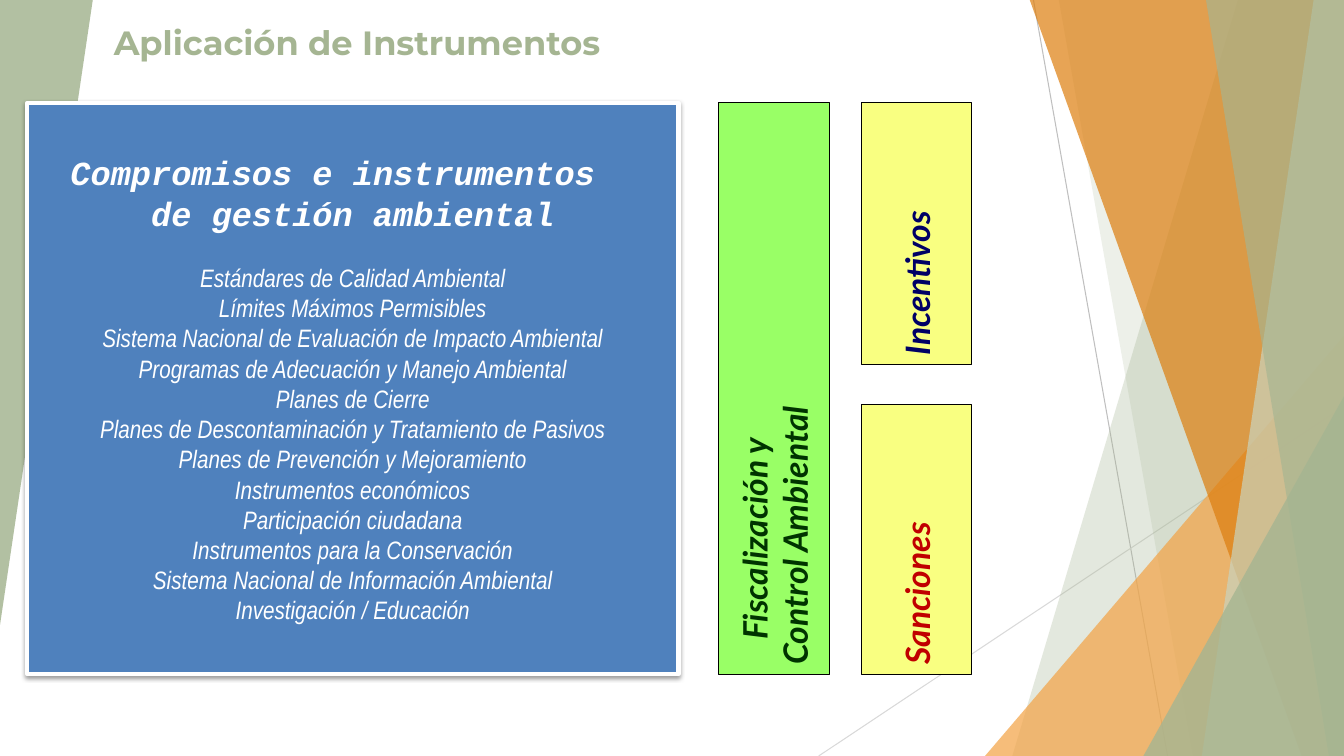
from lxml import etree
from pptx import Presentation
from pptx.dml.color import RGBColor
from pptx.enum import shapes, text
from pptx.oxml.ns import qn
from pptx.util import Inches, Pt


def paint(shape, fill, opacity=100, border=None, width=0.75):
    """Fill a shape, with opacity in percent and an optional border."""
    shape.shadow.inherit = False
    shape.fill.solid()
    shape.fill.fore_color.rgb = RGBColor.from_string(fill)
    if opacity < 100:
        color = shape._element.spPr.find(qn("a:solidFill"))[0]
        etree.SubElement(color, qn("a:alpha"), val=str(opacity * 1000))
    if border:
        shape.line.color.rgb = RGBColor.from_string(border)
        shape.line.width = Pt(width)
    else:
        shape.line.fill.background()


def format_text(paragraph, font, size, color, bold=True, italic=True):
    for run in paragraph.runs:
        run.font.name = font
        run.font.size = Pt(size)
        run.font.bold = bold
        run.font.italic = italic
        run.font.color.rgb = RGBColor.from_string(color)


prs = Presentation()
prs.slide_width, prs.slide_height = Inches(13.33), Inches(7.5)
slide = prs.slides.add_slide(prs.slide_layouts[6])
canvas = slide.shapes

# Thin lines behind the facets
for x1, y1, x2, y2, color in [
    (10.25, 0, 11.58, 7.5, "BFBFBF"),
    (13.33, 4.03, 8.12, 7.5, "D9D9D9"),
]:
    ray = canvas.add_connector(
        shapes.MSO_CONNECTOR.STRAIGHT, Inches(x1), Inches(y1), Inches(x2), Inches(y2))
    ray.line.color.rgb = RGBColor.from_string(color)
    ray.line.width = Pt(0.75)
    etree.SubElement(ray._element.spPr, qn("a:effectLst"))

# Facets, back to front: a band is (top x, bottom x) and runs to the right edge,
# a triangle is (left, top, width, height, rotation)
facets = [
    ("band", (12.28, 10.04), "A5B592", 30),
    ("band", (10.5, 11.83), "A5B592", 20),
    ("triangle", (9.77, 3.33, 3.56, 4.17, 0), "F3A447", 72),
    ("band", (10.21, 12.91), "DD7E0E", 70),
    ("band", (13.03, 11.92), "C9D3BE", 70),
    ("band", (11.96, 13.18), "A5B592", 65),
    ("triangle", (11.34, 3.93, 1.99, 3.57, 0), "A5B592", 80),
    ("triangle", (0, 0, 0.92, 6.2, 180), "A5B592", 85),
]
for kind, geometry, color, opacity in facets:
    if kind == "band":
        top_x, bottom_x = geometry
        outline = canvas.build_freeform(Inches(top_x), Inches(-0.01))
        outline.add_line_segments(
            [(Inches(x), Inches(y)) for x, y in [(13.33, -0.01), (13.33, 7.5), (bottom_x, 7.5)]])
        facet = outline.convert_to_shape()
    else:
        *box, rotation = geometry
        facet = canvas.add_shape(
            shapes.MSO_SHAPE.ISOSCELES_TRIANGLE, *[Inches(v) for v in box])
        facet.adjustments[0] = 1
        facet.rotation = rotation
    paint(facet, color, opacity)

title = canvas.add_textbox(Inches(1.03), Inches(0), Inches(8.49), Inches(0.67)).text_frame
title.word_wrap = True
title.vertical_anchor = text.MSO_ANCHOR.BOTTOM
title.text = "Aplicación de Instrumentos"
format_text(title.paragraphs[0], "Montserrat", 24, "A5B592", italic=False)

# Panel of commitments and instruments
heading = ["Compromisos e instrumentos", "de gestión ambiental"]
instruments = [
    "Estándares de Calidad Ambiental",
    "Límites Máximos Permisibles",
    "Sistema Nacional de Evaluación de Impacto Ambiental",
    "Programas de Adecuación y Manejo Ambiental",
    "Planes de Cierre",
    "Planes de Descontaminación y Tratamiento de Pasivos",
    "Planes de Prevención y Mejoramiento",
    "Instrumentos económicos",
    "Participación ciudadana",
    "Instrumentos para la Conservación",
    "Sistema Nacional de Información Ambiental",
    "Investigación / Educación",
]
panel = canvas.add_shape(
    shapes.MSO_SHAPE.RECTANGLE, Inches(0.27), Inches(1.02), Inches(6.46), Inches(5.67))
paint(panel, "4F81BD", border="FFFFFF", width=3)
shadow = etree.SubElement(
    panel._element.spPr.find(qn("a:effectLst")), qn("a:outerShdw"),
    blurRad=str(Pt(3.1)), dist=str(Pt(1.6)), dir="5400000", rotWithShape="0")
shadow_color = etree.SubElement(shadow, qn("a:srgbClr"), val="000000")
etree.SubElement(shadow_color, qn("a:alpha"), val="38000")

# The first heading line sits left of centre; the indent re-centres the rest
panel.text_frame.word_wrap = True
panel.text_frame.margin_right = Inches(0.5)
panel.text_frame.vertical_anchor = text.MSO_ANCHOR.MIDDLE
panel.text_frame.text = "\n".join(heading + instruments)
for i, paragraph in enumerate(panel.text_frame.paragraphs):
    paragraph.alignment = text.PP_ALIGN.CENTER
    paragraph._p.get_or_add_pPr().set("marL", str(Inches(0.4 if i else 0)))
    if i < len(heading):
        format_text(paragraph, "Courier New", 24, "FFFFFF")
    else:
        format_text(paragraph, "Arial Narrow", 18, "FFFFFF", bold=False)
panel.text_frame.paragraphs[len(heading)].space_before = Pt(21)

# Upright bars, read from bottom to top
for left, top, height, fill, color, label in [
    (7.13, 1.02, 5.67, "99FF66", "003300", "Fiscalización y \nControl Ambiental"),
    (8.54, 1.02, 2.6, "F9FF81", "000066", "Incentivos"),
    (8.54, 4.01, 2.68, "F9FF81", "C00000", "Sanciones"),
]:
    bar = canvas.add_shape(
        shapes.MSO_SHAPE.RECTANGLE, Inches(left), Inches(top), Inches(1.1), Inches(height))
    bar.rotation = 180
    paint(bar, fill, border="000000")
    bar.text_frame.word_wrap = False
    bar.text_frame.vertical_anchor = text.MSO_ANCHOR.MIDDLE
    bar.text_frame._txBody.bodyPr.set("vert", "eaVert")
    bar.text_frame.text = label
    for paragraph in bar.text_frame.paragraphs:
        paragraph.alignment = text.PP_ALIGN.CENTER
        format_text(paragraph, "Lato", 24, color)

prs.save("out.pptx")
